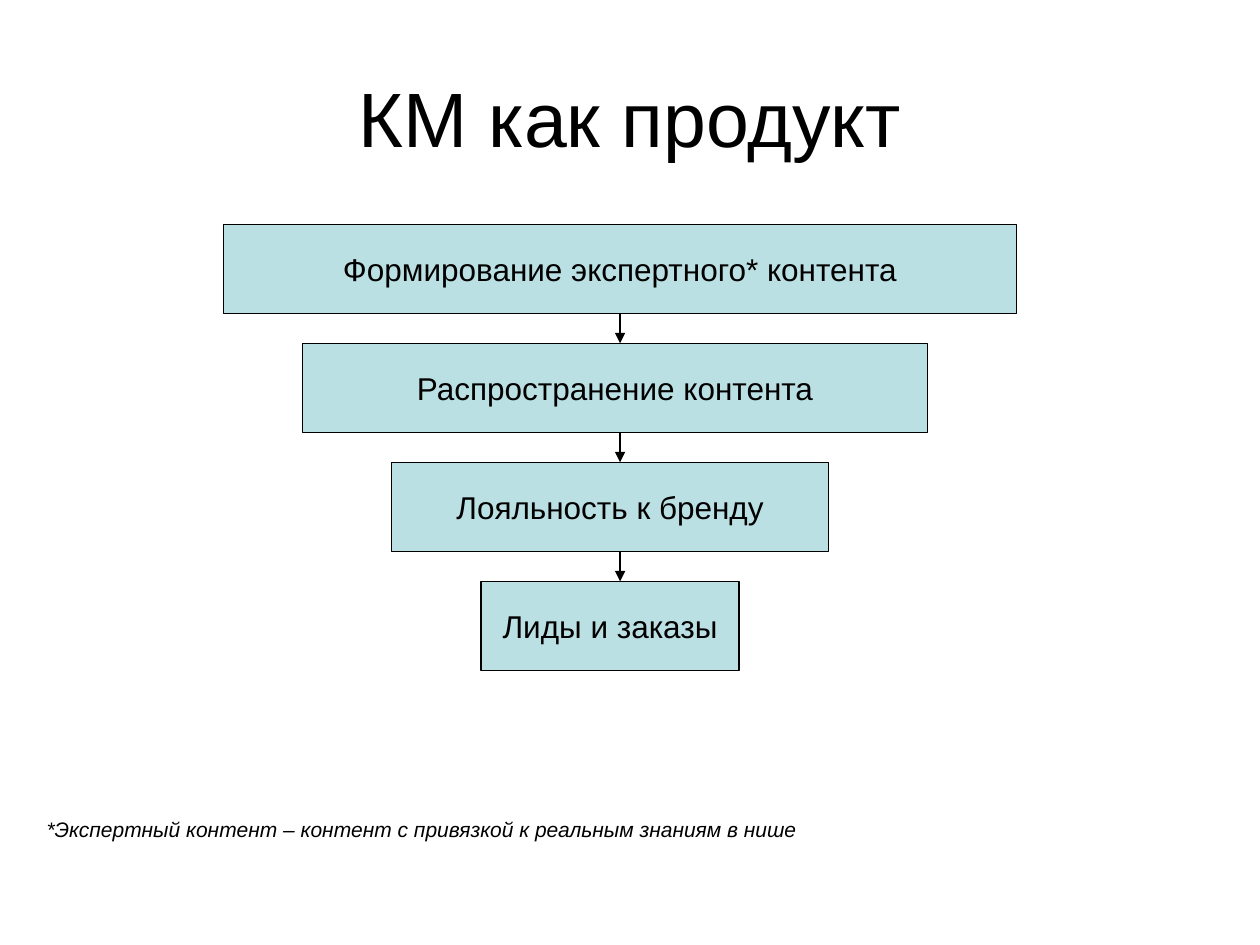
"""Builds the content-marketing funnel slide."""
from lxml.etree import SubElement
from pptx import Presentation
from pptx.dml.color import RGBColor
from pptx.enum.shapes import MSO_CONNECTOR, MSO_SHAPE
from pptx.enum.text import MSO_ANCHOR, MSO_AUTO_SIZE, PP_ALIGN
from pptx.oxml.ns import qn
from pptx.util import Cm, Pt

BLACK = RGBColor(0x00, 0x00, 0x00)
PALE_TEAL = RGBColor(0xBB, 0xE0, 0xE3)

STAGES = [
    ("Формирование экспертного* контента", 4.5, 16),
    ("Распространение контента", 6.1, 12.6),
    ("Лояльность к бренду", 7.9, 8.8),
    ("Лиды и заказы", 9.7, 5.2),
]
FUNNEL_TOP = 4.52
STAGE_HEIGHT = 1.8
STAGE_STEP = 2.4
ARROW_X = 12.5


class FunnelSlide:
    """Holds the style and the current slide."""

    font = "Arial"
    line_width = Pt(0.75)

    def __init__(self, slide):
        self.slide = slide

    def add_wording(self, frame, wording, size, align, anchor, italic=False, wrap=False):
        frame.word_wrap = wrap
        frame.vertical_anchor = anchor
        paragraph = frame.paragraphs[0]
        paragraph.alignment = align
        run = paragraph.add_run()
        run.text = wording
        run.font.name = self.font
        run.font.size = Pt(size)
        run.font.italic = italic
        run.font.color.rgb = BLACK

    def title(self, wording, left, top, width, height):
        heading = self.slide.shapes.title
        heading.left, heading.top = Cm(left), Cm(top)
        heading.width, heading.height = Cm(width), Cm(height)
        self.add_wording(heading.text_frame, wording, 44, PP_ALIGN.CENTER,
                         MSO_ANCHOR.MIDDLE, wrap=True)

    def stage(self, wording, left, top, width, height):
        stage = self.slide.shapes.add_shape(
            MSO_SHAPE.RECTANGLE, Cm(left), Cm(top), Cm(width), Cm(height))
        stage.shadow.inherit = False
        stage.fill.solid()
        stage.fill.fore_color.rgb = PALE_TEAL
        stage.line.color.rgb = BLACK
        stage.line.width = self.line_width
        self.add_wording(stage.text_frame, wording, 18, PP_ALIGN.CENTER,
                         MSO_ANCHOR.MIDDLE)

    def arrow(self, x, start, end):
        arrow = self.slide.shapes.add_connector(
            MSO_CONNECTOR.STRAIGHT, Cm(x), Cm(start), Cm(x), Cm(end))
        arrow.line.color.rgb = BLACK
        arrow.line.width = self.line_width
        properties = arrow._element.spPr
        SubElement(properties.find(qn("a:ln")), qn("a:tailEnd"), type="triangle")
        SubElement(properties, qn("a:effectLst"))

    def footnote(self, wording, left, top, width, height):
        footnote = self.slide.shapes.add_textbox(
            Cm(left), Cm(top), Cm(width), Cm(height))
        footnote.text_frame.auto_size = MSO_AUTO_SIZE.SHAPE_TO_FIT_TEXT
        self.add_wording(footnote.text_frame, wording, 12, PP_ALIGN.LEFT,
                         MSO_ANCHOR.TOP, italic=True)


def main():
    presentation = Presentation()
    presentation.slide_width, presentation.slide_height = Cm(25.4), Cm(19.05)
    funnel = FunnelSlide(presentation.slides.add_slide(presentation.slide_layouts[5]))

    funnel.title("КМ как продукт", 1.27, 0.76, 22.86, 3.18)
    for level, (wording, left, width) in enumerate(STAGES):
        funnel.stage(wording, left, FUNNEL_TOP + level * STAGE_STEP, width, STAGE_HEIGHT)
    funnel.footnote(
        "*Экспертный контент – контент с привязкой к реальным знаниям в нише",
        0.69, 16.33, 15.65, 0.76)
    for level in range(1, len(STAGES)):
        next_top = FUNNEL_TOP + level * STAGE_STEP
        funnel.arrow(ARROW_X, next_top - STAGE_STEP + STAGE_HEIGHT, next_top)

    presentation.save("out.pptx")


if __name__ == "__main__":
    main()
